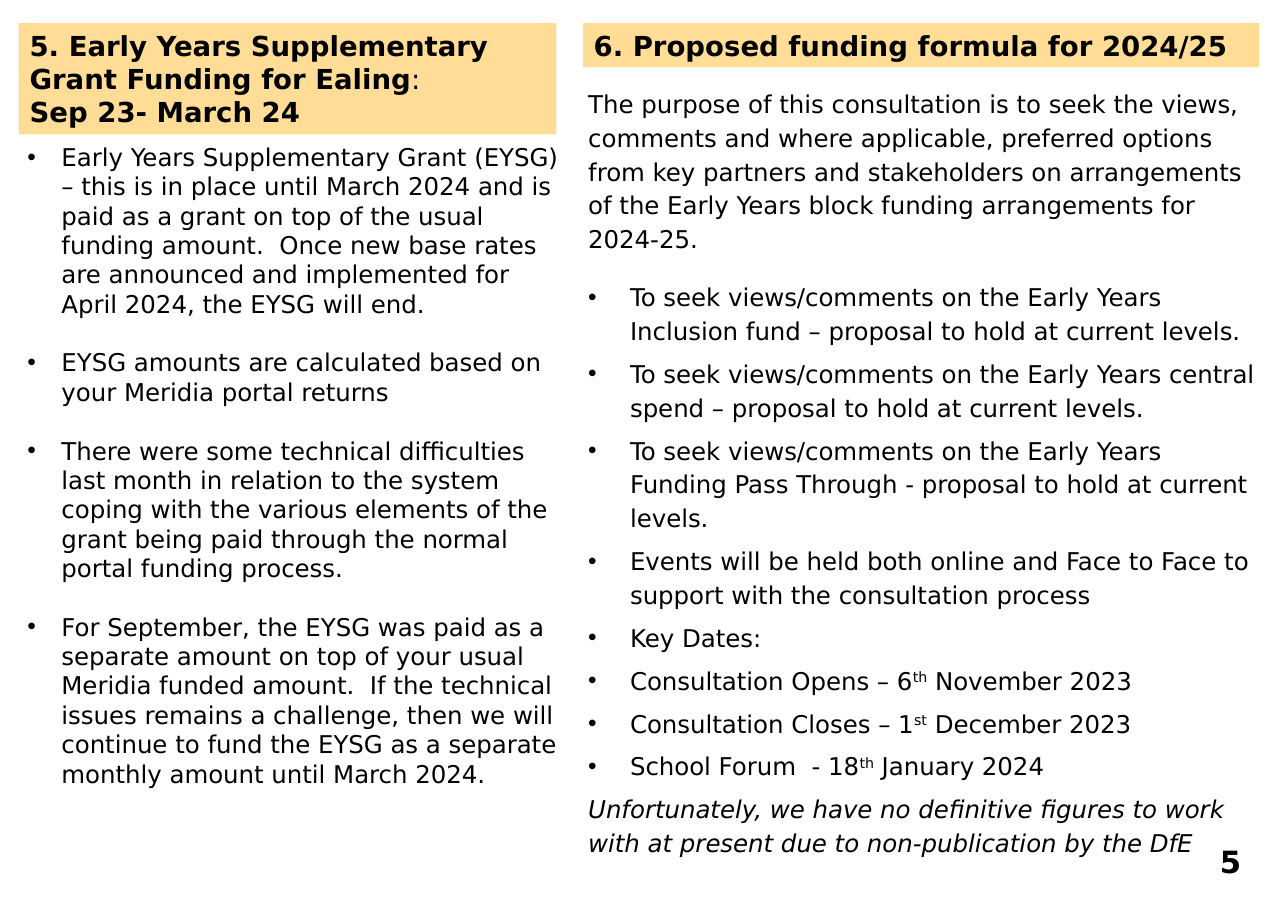
from lxml.etree import SubElement
from pptx import Presentation
from pptx.dml.color import RGBColor
from pptx.enum.shapes import MSO_SHAPE
from pptx.enum.text import MSO_ANCHOR, MSO_AUTO_SIZE, PP_ALIGN
from pptx.oxml.ns import qn
from pptx.util import Inches, Pt

COLORS = {"text": "000000", "heading": "FFDD97"}
FONT = "DejaVu Sans"

GRANT_HEADING = [
    [("5. Early Years Supplementary Grant Funding for Ealing", "bold"), (":", "")],
    [("Sep 23- March 24", "bold")],
]
GRANT_POINTS = [
    "Early Years Supplementary Grant (EYSG) – this is in place until March 2024 and is paid as a grant on top of the usual funding amount.  Once new base rates are announced and implemented for April 2024, the EYSG will end.",
    "EYSG amounts are calculated based on your Meridia portal returns",
    "There were some technical difficulties last month in relation to the system coping with the various elements of the grant being paid through the normal portal funding process.",
    "For September, the EYSG was paid as a separate amount on top of your usual Meridia funded amount.  If the technical issues remains a challenge, then we will continue to fund the EYSG as a separate monthly amount until March 2024.",
]
FORMULA_HEADING = [[("6. Proposed funding formula for 2024/25", "bold")]]
PURPOSE = "The purpose of this consultation is to seek the views, comments and where applicable, preferred options from key partners and stakeholders on arrangements of the Early Years block funding arrangements for 2024-25."
FORMULA_POINTS = [
    "To seek views/comments on the Early Years Inclusion fund – proposal to hold at current levels.",
    "To seek views/comments on the Early Years central spend – proposal to hold at current levels.",
    "To seek views/comments on the Early Years Funding Pass Through - proposal to hold at current levels.",
    "Events will be held both online and Face to Face to support with the consultation process",
    "Key Dates:",
]
KEY_DATES = [
    ("Consultation Opens – 6", "th", " November 2023"),
    ("Consultation Closes – 1", "st", " December 2023"),
    ("School Forum  - 18", "th", " January 2024"),
]
CLOSING = "Unfortunately, we have no definitive figures to work with at present due to non-publication by the DfE"


def write(shape, lines, size):
    frame = shape.text_frame
    frame.word_wrap = True
    frame.auto_size = MSO_AUTO_SIZE.SHAPE_TO_FIT_TEXT
    for index, spans in enumerate(lines):
        para = frame.add_paragraph() if index else frame.paragraphs[0]
        para.alignment = PP_ALIGN.LEFT
        for text, style in spans:
            span = para.add_run()
            span.text = text
            font = span.font
            font.name, font.size = FONT, Pt(size)
            font.color.rgb = RGBColor.from_string(COLORS["text"])
            font.bold = style == "bold"
            font.italic = style == "italic"
            if style == "raised":
                font._element.set("baseline", "30000")
    return frame.paragraphs


def add_heading(page, area, lines):
    box = page.shapes.add_shape(MSO_SHAPE.RECTANGLE, *map(Inches, area))
    box.shadow.inherit = False
    box.fill.solid()
    box.fill.fore_color.rgb = RGBColor.from_string(COLORS["heading"])
    box.line.fill.background()
    box.text_frame.vertical_anchor = MSO_ANCHOR.TOP
    write(box, lines, 18)


def add_text(page, area, lines, size):
    return write(page.shapes.add_textbox(*map(Inches, area)), lines, size)


def add_bullet(para, indent):
    properties = para._p.get_or_add_pPr()
    properties.set("marL", str(Inches(indent)))
    properties.set("indent", str(-Inches(indent)))
    SubElement(properties, qn("a:buFont"), typeface="Arial")
    SubElement(properties, qn("a:buChar"), char="•")


def main():
    deck = Presentation()
    deck.slide_width, deck.slide_height = Inches(11.69), Inches(8.27)
    page = deck.slides.add_slide(deck.slide_layouts[6])

    add_heading(page, (0.17, 0.21, 4.88, 1.01), GRANT_HEADING)
    grant_lines = [[(point, "")] for point in GRANT_POINTS]
    for index, para in enumerate(add_text(page, (0.15, 1.24, 5.04, 6.83), grant_lines, 16)):
        para.space_before = Pt(19.2 if index else 0)
        add_bullet(para, 0.31)

    add_text(page, (10.9, 7.6, 0.54, 0.44), [[("5", "bold")]], 20)[0].alignment = PP_ALIGN.CENTER

    add_heading(page, (5.29, 0.21, 6.14, 0.4), FORMULA_HEADING)
    formula_lines = [[(text, "")] for text in [PURPOSE, *FORMULA_POINTS]]
    formula_lines += [[(day, ""), (suffix, "raised"), (month, "")] for day, suffix, month in KEY_DATES]
    formula_lines.append([(CLOSING, "italic")])
    paras = add_text(page, (5.24, 0.72, 6.32, 7.46), formula_lines, 16)
    for para in paras:
        para.line_spacing = 1.15
        para.space_before = Pt(6)
    paras[0].space_after = Pt(10)
    for para in paras[1:-1]:
        add_bullet(para, 0.38)

    deck.save("out.pptx")


if __name__ == "__main__":
    main()
